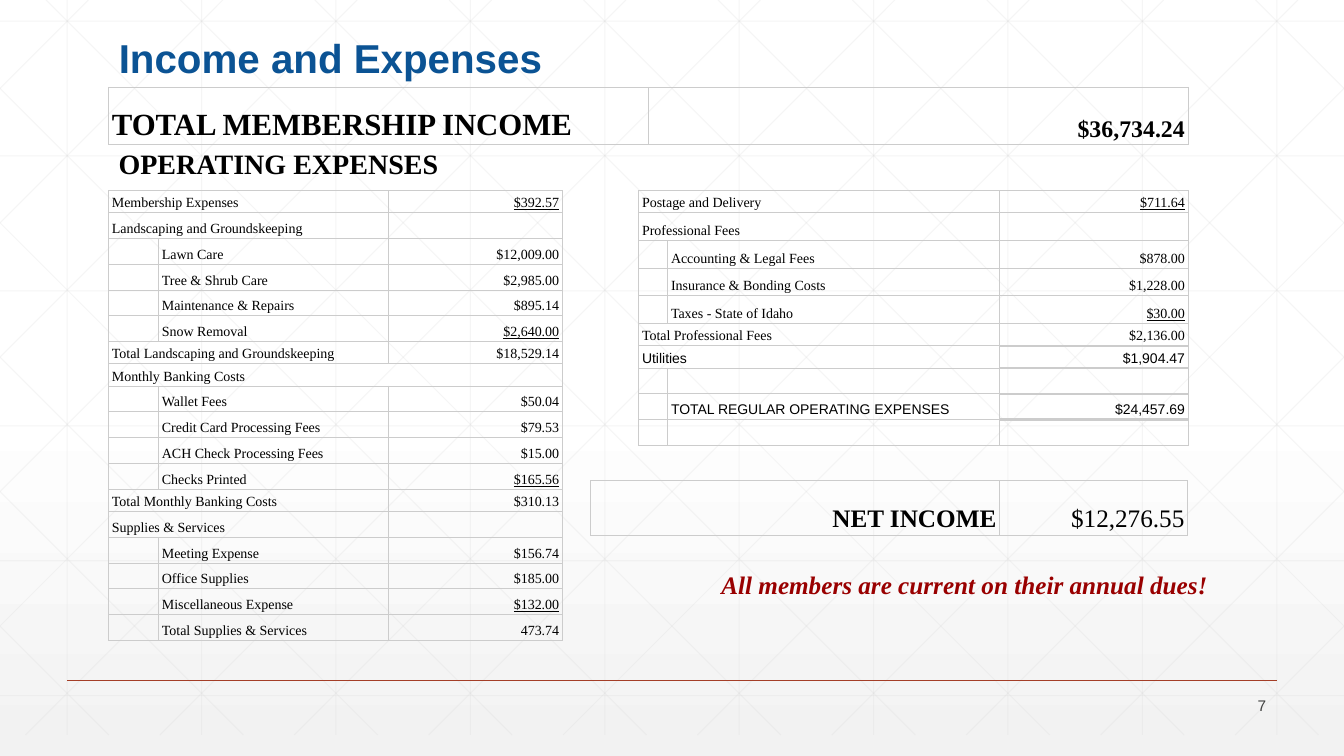
import pptx
import pptx.dml.color
import pptx.enum.shapes
import pptx.enum.text
import pptx.oxml
import pptx.oxml.ns
import pptx.util
from dataclasses import dataclass

Cm = pptx.util.Cm
Pt = pptx.util.Pt
qn = pptx.oxml.ns.qn
ALIGN = pptx.enum.text.PP_ALIGN
ANCHOR = pptx.enum.text.MSO_ANCHOR
A_NS = 'xmlns:a="http://schemas.openxmlformats.org/drawingml/2006/main"'


@dataclass(frozen=True)
class Theme:
    sans: str = "Arial"
    serif: str = "Times New Roman"
    title: str = "0B5394"
    text: str = "000000"
    notice: str = "990000"
    number: str = "414241"
    rule: str = "A43E27"
    grid: str = "D8D8D8"
    border: str = "CCCCCC"
    bg_top: str = "FFFFFF"
    bg_bottom: str = "F2F2F2"
    title_size: float = 28.8
    income_size: float = 22
    heading_size: float = 20
    net_size: float = 18
    amount_size: float = 17
    number_size: float = 11
    table_size: float = 10


T = Theme()
W, H = 33.87, 19.05
GRID_BOTTOM = 18.52
LEFT, RIGHT_LEFT = 2.74, 16.1
FULL, GAPPED, ITEM = 0.56, 0.65, 0.7  # row heights

# Rows: kind, label, amount. A trailing "_" on the kind underlines the amount.
LEFT_ROWS = [
    ("head_", "Membership Expenses", "$392.57"),
    ("head", "Landscaping and Groundskeeping", ""),
    ("item", "Lawn Care", "$12,009.00"),
    ("item", "Tree & Shrub Care", "$2,985.00"),
    ("item", "Maintenance & Repairs", "$895.14"),
    ("item_", "Snow Removal", "$2,640.00"),
    ("head", "Total Landscaping and Groundskeeping", "$18,529.14"),
    ("wide", "Monthly Banking Costs", ""),
    ("item", "Wallet Fees", "$50.04"),
    ("item", "Credit Card Processing Fees", "$79.53"),
    ("item", "ACH Check Processing Fees", "$15.00"),
    ("item_", "Checks Printed", "$165.56"),
    ("head", "Total Monthly Banking Costs", "$310.13"),
    ("head", "Supplies & Services", ""),
    ("item", "Meeting Expense", "$156.74"),
    ("item", "Office Supplies", "$185.00"),
    ("item_", "Miscellaneous Expense", "$132.00"),
    ("item", "Total Supplies & Services", "473.74"),
]
RIGHT_ROWS = [
    ("head_", "Postage and Delivery", "$711.64"),
    ("head", "Professional Fees", ""),
    ("item", "Accounting & Legal Fees", "$878.00"),
    ("item", "Insurance & Bonding Costs", "$1,228.00"),
    ("item_", "Taxes - State of Idaho", "$30.00"),
    ("head", "Total Professional Fees", "$2,136.00"),
    ("head", "Utilities", "$1,904.47"),
    ("item", "", ""),
    ("item", "TOTAL REGULAR OPERATING EXPENSES", "$24,457.69"),
    ("item", "", ""),
]
SANS_FROM = 6           # first right-hand row set in the sans font
HEAVY_EDGES = range(6, 10)  # right-hand rows whose amount has a thick top edge


def rgb(value):
    return pptx.dml.color.RGBColor.from_string(value)


def apply(target, values):
    for name, value in values.items():
        setattr(target, name, value)


def write(tf, text, size, color=T.text, font=T.serif, align=ALIGN.LEFT, spacing=None, **style):
    p = tf.paragraphs[0]
    apply(p, {"alignment": align, "line_spacing": spacing})
    if not text:
        p._p.get_or_add_endParaRPr().set("sz", str(int(size * 100)))
        return
    r = p.add_run()
    r.text = text
    apply(r.font, {"name": font, "size": Pt(size), **style})
    r.font.color.rgb = rgb(color)


def add_line(s, x1, y1, x2, y2, color, width, alpha=None):
    ln = s.shapes.add_connector(pptx.enum.shapes.MSO_CONNECTOR.STRAIGHT,
                                Cm(x1), Cm(y1), Cm(x2), Cm(y2))
    ln.line.color.rgb = rgb(color)
    ln.line.width = Pt(width)
    spPr = ln._element.spPr
    spPr.append(pptx.oxml.parse_xml(f"<a:effectLst {A_NS}/>"))
    if alpha:
        clr = next(spPr.iter(qn("a:srgbClr")))
        clr.append(pptx.oxml.parse_xml(f'<a:alpha {A_NS} val="{alpha * 1000}"/>'))


def add_backdrop(s):
    fill = s.background.fill
    fill.gradient()
    fill.gradient_angle = 270
    for stop, position, color in zip(fill.gradient_stops, (0.53, 1), (T.bg_top, T.bg_bottom)):
        stop.position = position
        stop.color.rgb = rgb(color)

    grid = (T.grid, 0.75, 24)
    step = W / 10
    for i in range(10):
        x = step * (i + 0.5)
        add_line(s, x, 0, x, GRID_BOTTOM, *grid)
    for i in range(6):
        y = 0.53 + 3.4 * i
        add_line(s, 0, y, W, y, *grid)
    # Diagonals clipped to the slide, each with its mirror image
    for i in range(-5, 10):
        start = 0.63 + step * i + 0.53
        y1, y2 = max(0, -start), min(GRID_BOTTOM, W - start)
        x1, x2 = start + y1, start + y2
        add_line(s, x1, y1, x2, y2, *grid)
        add_line(s, W - x1, y1, W - x2, y2, *grid)


def add_title(s, text):
    sp = s.shapes.title
    apply(sp, {"left": Cm(LEFT), "top": Cm(0.76), "width": Cm(27.53), "height": Cm(1.45)})
    tf = sp.text_frame
    apply(tf, {"vertical_anchor": ANCHOR.BOTTOM, "word_wrap": True,
               "auto_size": pptx.enum.text.MSO_AUTO_SIZE.NONE})
    write(tf, text, T.title_size, T.title, T.sans, spacing=0.9, bold=True)
    s.shapes._spTree.append(sp._element)  # in front of the grid


def add_text(s, box, text, size, inset=0.25, anchor=ANCHOR.TOP, **style):
    tf = s.shapes.add_textbox(*map(Cm, box)).text_frame
    apply(tf, {"word_wrap": True, "vertical_anchor": anchor,
               "margin_top": Cm(inset), "margin_bottom": Cm(inset)})
    write(tf, text, size, **style)


def set_borders(cell, top=0.75, bottom=0.75):
    tcPr = cell._tc.get_or_add_tcPr()
    widths = {"lnL": 0.75, "lnR": 0.75, "lnT": top, "lnB": bottom}
    for i, (tag, width) in enumerate(widths.items()):
        tcPr.insert(i, pptx.oxml.parse_xml(
            f'<a:{tag} {A_NS} w="{Pt(width)}"><a:solidFill>'
            f'<a:srgbClr val="{T.border}"/></a:solidFill></a:{tag}>'))


def add_table(s, left, top, cols, heights, heavy=()):
    tbl = s.shapes.add_table(len(heights), len(cols), Cm(left), Cm(top),
                             Cm(sum(cols)), Cm(sum(heights))).table
    apply(tbl, {"first_row": False, "horz_banding": False})
    for col, width in zip(tbl.columns, cols):
        col.width = Cm(width)
    for i, height in enumerate(heights):
        tbl.rows[i].height = Cm(height)
        for j in range(len(cols)):
            cell = tbl.cell(i, j)
            cell.fill.background()
            apply(cell, {"vertical_anchor": ANCHOR.BOTTOM,
                         "margin_left": Cm(0.08), "margin_right": Cm(0.08),
                         "margin_top": Cm(0.05), "margin_bottom": Cm(0.05)})
            last = j == len(cols) - 1
            set_borders(cell, 2.25 if last and i in heavy else 0.75,
                        2.25 if last and i + 1 in heavy else 0.75)
    return tbl


def fill_cell(cell, text, size, **style):
    write(cell.text_frame, text, size, spacing=1.15, **style)


def add_expenses(s, left, cols, rows, heights, sans_from=None, heavy=()):
    tbl = add_table(s, left, 4.8, cols, heights, heavy)
    for i, (kind, label, amount) in enumerate(rows):
        font = T.sans if sans_from is not None and i >= sans_from else T.serif
        item = kind.startswith("item")
        texts = ("", label, amount) if item else (label, "", amount)
        for j, text in enumerate(texts):
            style = {"align": ALIGN.RIGHT, "underline": kind.endswith("_")} if j == 2 else {}
            fill_cell(tbl.cell(i, j), text, T.table_size, font=font, **style)
        if not item:
            tbl.cell(i, 0).merge(tbl.cell(i, 2 if kind == "wide" else 1))


def row_height(row):
    kind, _, amount = row
    return FULL if kind == "wide" or (kind.startswith("head") and amount) else GAPPED


def main():
    prs = pptx.Presentation()
    prs.slide_width, prs.slide_height = Cm(W), Cm(H)
    s = prs.slides.add_slide(prs.slide_layouts[5])

    add_backdrop(s)
    add_line(s, 1.69, 17.14, 32.18, 17.14, T.rule, 1)
    add_title(s, "Income and Expenses")

    # Income
    tbl = add_table(s, LEFT, 2.2, [13.6, 13.6], [1.44])
    fill_cell(tbl.cell(0, 0), "TOTAL MEMBERSHIP INCOME", T.income_size, bold=True)
    fill_cell(tbl.cell(0, 1), "$36,734.24", T.amount_size, align=ALIGN.RIGHT, bold=True)

    # Expenses
    add_expenses(s, LEFT, [1.26, 5.8, 4.37], LEFT_ROWS, [row_height(r) for r in LEFT_ROWS])
    right_heights = [ITEM if 1 <= i <= 4 else row_height(r) for i, r in enumerate(RIGHT_ROWS)]
    add_expenses(s, RIGHT_LEFT, [0.73, 8.37, 4.74], RIGHT_ROWS, right_heights,
                 SANS_FROM, HEAVY_EDGES)
    add_text(s, (LEFT, 3.43, 27.2, 1.37), "OPERATING EXPENSES", T.heading_size, bold=True)

    # Net income
    tbl = add_table(s, 14.88, 12.11, [10.31, 4.74], [1.38])
    fill_cell(tbl.cell(0, 0), "NET INCOME", T.net_size, align=ALIGN.RIGHT, bold=True)
    fill_cell(tbl.cell(0, 1), "$12,276.55", T.net_size, align=ALIGN.RIGHT)

    # Notice and page number
    add_text(s, (17.93, 14.1, 13.49, 1.27), "All members are current on their annual dues!",
             T.net_size, color=T.notice, bold=True, italic=True)
    add_text(s, (29.62, 17.48, 2.54, 0.61), "7", T.number_size, inset=0.13,
             anchor=ANCHOR.MIDDLE, color=T.number, font=T.sans, align=ALIGN.RIGHT)

    prs.save("out.pptx")


if __name__ == "__main__":
    main()
